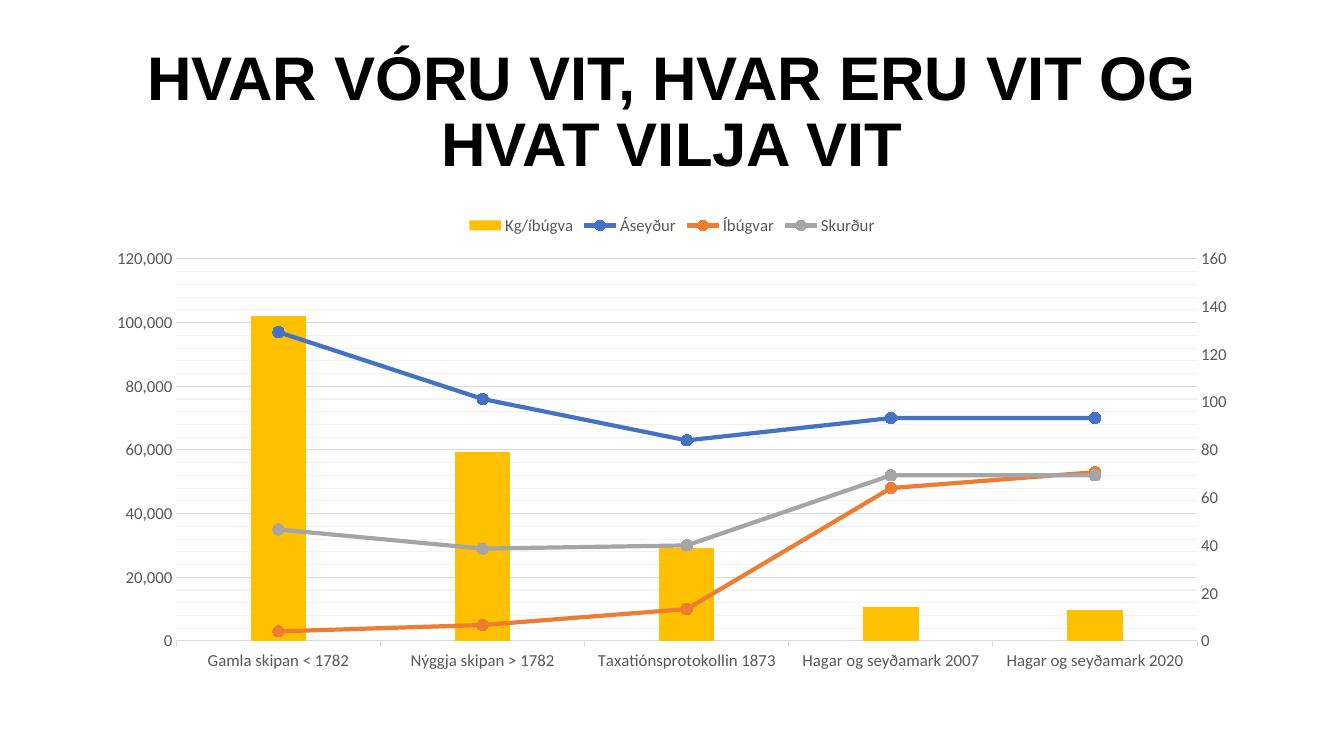
from copy import deepcopy

from pptx import Presentation
from pptx import util as u
from pptx.chart.axis import CategoryAxis, ValueAxis
from pptx.chart.data import CategoryChartData
from pptx.dml.color import RGBColor
from pptx.enum import chart as ch, text
from pptx.oxml import parse_xml
from pptx.oxml.ns import nsdecls, qn

WIDTH, HEIGHT = u.Inches(13.33), u.Inches(7.5)
COLOURS = {
    "title": "000000", "label": "595959", "grid": "D9D9D9", "minor": "F2F2F2",
    "Kg/íbúgva": "FFC000", "Áseyður": "4472C4",
    "Íbúgvar": "ED7D31", "Skurður": "A5A5A5",
}
PERIODS = ["Gamla skipan < 1782", "Nýggja skipan > 1782",
           "Taxatiónsprotokollin 1873", "Hagar og seyðamark 2007",
           "Hagar og seyðamark 2020"]
SERIES = {
    "Kg/íbúgva": (136, 79, 39, 14, 13),
    "Áseyður": (97000, 76000, 63000, 70000, 70000),
    "Íbúgvar": (3000, 5000, 10000, 48000, 53000),
    "Skurður": (35000, 29000, 30000, 52000, 52000),
}


def rgb(name):
    """Return the named colour."""
    return RGBColor.from_string(COLOURS[name])


def box(left, top, width, height):
    """Turn shares of the slide into lengths."""
    return (int(WIDTH * left), int(HEIGHT * top),
            int(WIDTH * width), int(HEIGHT * height))


def add_title(slide, words, place):
    """Place and format the slide title."""
    sp = slide.shapes.title
    sp.left, sp.top, sp.width, sp.height = place
    tf = sp.text_frame
    tf.text = words
    tf.word_wrap = True
    tf.auto_size = text.MSO_AUTO_SIZE.NONE
    tf.vertical_anchor = text.MSO_ANCHOR.MIDDLE
    p = tf.paragraphs[0]
    p.alignment = text.PP_ALIGN.CENTER
    p.line_spacing = 0.9
    font = p.runs[0].font
    font.name, font.size, font.bold = "Arial", u.Pt(44), True
    font.color.rgb = rgb("title")


def split_lines(chart):
    """Move all series but the first to a line plot, whose axes come first."""
    plot_area = chart.plots[0]._element.getparent()
    bars = plot_area.find(qn("c:barChart"))
    lines = parse_xml(
        f'<c:lineChart {nsdecls("c")}><c:grouping val="standard"/>'
        '<c:varyColors val="0"/><c:marker val="1"/>'
        '<c:axId val="5001"/><c:axId val="5002"/></c:lineChart>')
    bars.addnext(lines)
    marker = lines.find(qn("c:marker"))
    for ser in bars.findall(qn("c:ser"))[1:]:
        for invert in ser.findall(qn("c:invertIfNegative")):
            ser.remove(invert)
        marker.addprevious(ser)
    cat, val = plot_area.find(qn("c:catAx")), plot_area.find(qn("c:valAx"))
    line_cat, line_val = deepcopy(cat), deepcopy(val)
    for axis, own, other in ((line_cat, "5001", "5002"),
                             (line_val, "5002", "5001")):
        axis.find(qn("c:axId")).set("val", own)
        axis.find(qn("c:crossAx")).set("val", other)
    previous = lines
    for axis in (line_cat, line_val, val, cat):
        previous.addnext(axis)
        previous = axis
    val.find(qn("c:axPos")).set("val", "r")
    val.find(qn("c:crosses")).set("val", "max")
    return (CategoryAxis(cat), ValueAxis(val),
            CategoryAxis(line_cat), ValueAxis(line_val))


def format_value_axis(axis, top, step, pattern):
    """Set the scale and labels of a value axis."""
    axis.minimum_scale, axis.maximum_scale, axis.major_unit = 0, top, step
    axis.major_tick_mark = axis.minor_tick_mark = ch.XL_TICK_MARK.NONE
    axis.has_major_gridlines = False
    axis.format.line.fill.background()
    axis.tick_labels.number_format = pattern
    axis.tick_labels.number_format_is_linked = False


def format_line(line, colour, width):
    """Set the colour and width of a line."""
    line.color.rgb = rgb(colour)
    line.width = u.Pt(width)


def format_series(plots):
    """Colour the bars, lines and markers."""
    bars, lines = plots
    bars.gap_width, bars.overlap = 269, 100
    bars.vary_by_categories = False
    fill = bars.series[0].format.fill
    fill.solid()
    fill.fore_color.rgb = rgb(bars.series[0].name)
    for s in lines.series:
        s.smooth = False
        format_line(s.format.line, s.name, 3)
        s.marker.style, s.marker.size = ch.XL_MARKER_STYLE.CIRCLE, 8
        s.marker.format.fill.solid()
        s.marker.format.fill.fore_color.rgb = rgb(s.name)
        format_line(s.marker.format.line, s.name, 0.75)


def add_combined_chart(slide, place):
    """Add the chart of bars and lines on two value axes."""
    data = CategoryChartData()
    data.categories = PERIODS
    for name, values in SERIES.items():
        data.add_series(name, values)
    chart = slide.shapes.add_chart(
        ch.XL_CHART_TYPE.COLUMN_STACKED, *place, data).chart
    chart.has_title = False
    chart.font.name, chart.font.size = "Calibri", u.Pt(12)
    chart.font.color.rgb = rgb("label")
    chart.has_legend = True
    chart.legend.position = ch.XL_LEGEND_POSITION.TOP
    chart.legend.include_in_layout = False

    bar_cat, bar_val, line_cat, line_val = split_lines(chart)
    bar_cat.visible = False
    format_value_axis(bar_val, 160, 20, "0")
    format_value_axis(line_val, 120000, 20000, "#,##0")
    line_val.minor_unit = 4000
    line_val.has_major_gridlines = line_val.has_minor_gridlines = True
    format_line(line_val.major_gridlines.format.line, "grid", 0.75)
    minor = line_val._element.find(qn("c:minorGridlines"))
    minor.append(parse_xml(
        f'<c:spPr {nsdecls("c", "a")}><a:ln w="9525"><a:solidFill>'
        f'<a:srgbClr val="{COLOURS["minor"]}"/></a:solidFill></a:ln></c:spPr>'))
    line_cat.major_tick_mark = ch.XL_TICK_MARK.OUTSIDE
    format_line(line_cat.format.line, "grid", 0.75)
    format_series(chart.plots)


def main():
    """Build the slide and save it."""
    prs = Presentation()
    prs.slide_width, prs.slide_height = WIDTH, HEIGHT
    slide = prs.slides.add_slide(prs.slide_layouts.get_by_name("Title Only"))
    add_title(slide, "HVAR VÓRU VIT, HVAR ERU VIT OG HVAT VILJA VIT",
              box(0.07, 0.05, 0.86, 0.2))
    add_combined_chart(slide, box(0.07, 0.27, 0.86, 0.63))
    prs.save("out.pptx")


if __name__ == "__main__":
    main()
